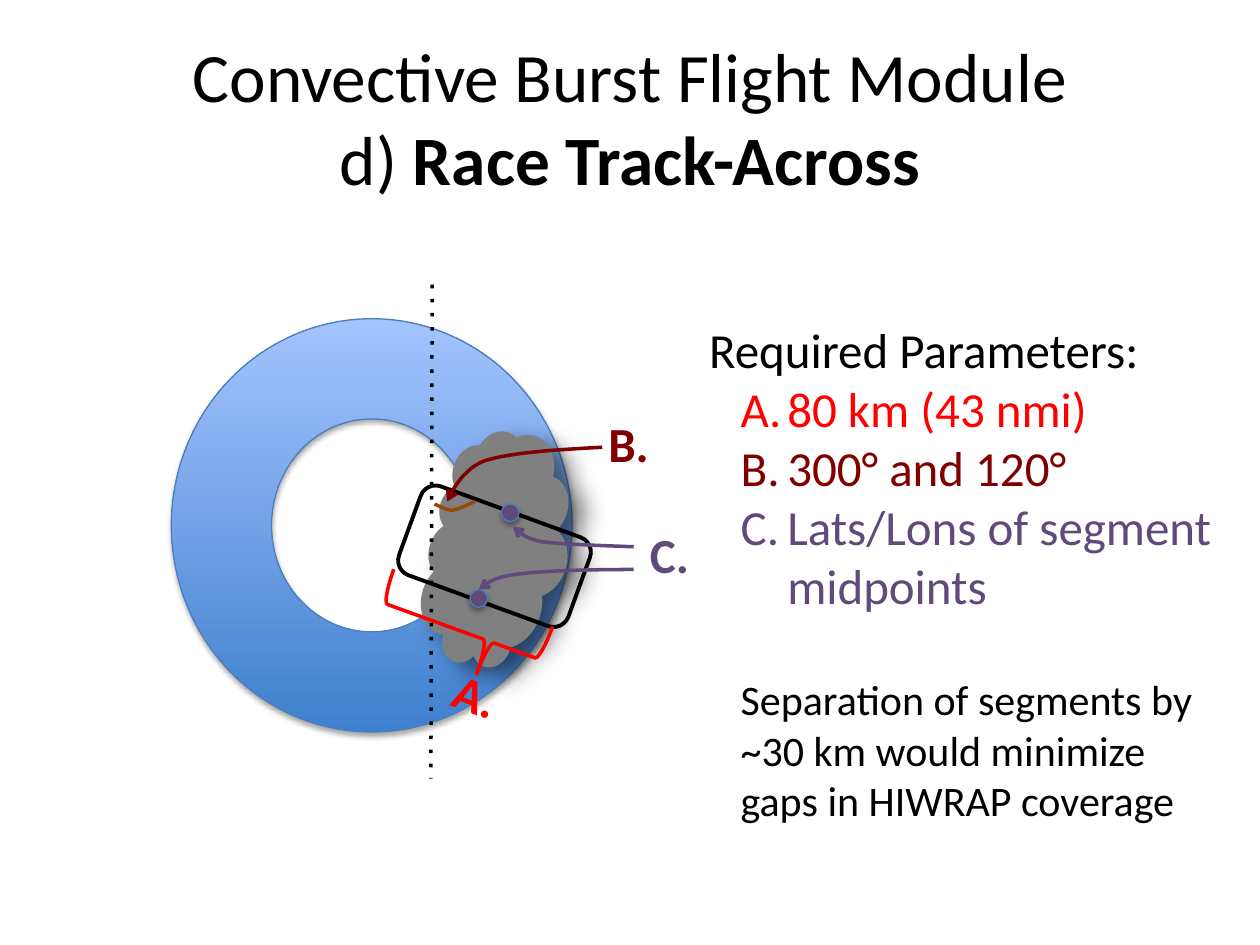
from dataclasses import dataclass
from typing import Optional

import lxml.etree
import pptx
import pptx.dml.color
import pptx.enum.dml
import pptx.enum.shapes
import pptx.enum.text
import pptx.oxml.ns
import pptx.util

Inches = pptx.util.Inches
Pt = pptx.util.Pt
Kind = pptx.enum.shapes.MSO_SHAPE
Align = pptx.enum.text.PP_ALIGN
qn = pptx.oxml.ns.qn

FONT = "Calibri"
COLORS = {
    "black": "000000", "red": "FF0000", "maroon": "800000", "purple": "604A7B",
    "brown": "984807", "gray": "808080", "outline": "4B7EBC",
    "ring_dark": "3F80CE", "ring_light": "A4C4FF",
}


@dataclass(frozen=True)
class Shadow:
    alpha: int
    blur: float
    distance: float
    angle: int


@dataclass(frozen=True)
class Figure:
    kind: Kind
    box: tuple
    fill: Optional[str] = None
    line: Optional[str] = None
    width: float = 0.75
    rotation: float = 0
    shadow: Optional[Shadow] = None


@dataclass(frozen=True)
class Curve:
    points: tuple
    color: str
    arrow: bool = False


@dataclass(frozen=True)
class Label:
    text: str
    box: tuple
    color: str
    rotation: float = 0


@dataclass(frozen=True)
class Entry:
    text: str
    color: str = "black"
    size: int = 28
    margin: float = 0
    hanging: float = 0
    gap: int = 0


SOFT = Shadow(35, 3.1, 1.8, 90)
DEEP = Shadow(52, 14.2, 11, 33)
RING = Figure(Kind.DONUT, (1.36, 2.53, 3.18, 3.28), "ring_dark", "outline", shadow=SOFT)
CLOUD = Figure(Kind.CLOUD, (3, 3.81, 1.9, 1.11), "gray", rotation=289.5, shadow=DEEP)
TRACK = Figure(Kind.ROUNDED_RECTANGLE, (3.21, 4.04, 1.43, 0.75), line="black",
               width=2.25, rotation=20)
LENGTH_BRACE = Figure(Kind.LEFT_BRACE, (3.38, 4.34, 0.56, 1.34), line="red",
                      width=2, rotation=289.9)
MIDPOINTS = [Figure(Kind.OVAL, (x, y, 0.14, 0.14), "purple", "outline", shadow=SOFT)
             for x, y in ((3.73, 4.68), (3.98, 4))]
ANGLE_ARC = Curve(((3.77, 3.98), (3.71, 4.01), (3.64, 4.04), (3.59, 4.05),
                   (3.54, 4.05), (3.45, 4), (3.45, 4)), "brown")
POINTERS = [
    Curve(((4.78, 3.55), (4.42, 3.57), (4.05, 3.59), (3.84, 3.66),
           (3.64, 3.74), (3.55, 3.98), (3.55, 3.98)), "maroon", True),
    Curve(((5.03, 4.52), (4.67, 4.52), (4.3, 4.53), (4.09, 4.56),
           (3.89, 4.58), (3.8, 4.68), (3.8, 4.68)), "purple", True),
    Curve(((5.03, 4.34), (4.75, 4.33), (4.46, 4.32), (4.3, 4.3),
           (4.14, 4.27), (4.07, 4.18), (4.07, 4.18)), "purple", True),
]
LABELS = [
    Label("A.", (3.51, 5.23, 0.55, 0.57), "red", 20.6),
    Label("B.", (4.73, 3.23, 0.53, 0.57), "maroon"),
    Label("C.", (5.06, 4.11, 0.51, 0.57), "purple"),
]
PARAMETERS = [
    Entry("Required Parameters:"),
    Entry("80 km (43 nmi)", "red", margin=0.62, hanging=0.37),
    Entry("300° and 120°", "maroon", margin=0.62, hanging=0.37),
    Entry("Lats/Lons of segment midpoints", "purple", margin=0.62, hanging=0.37),
    Entry("Separation of segments by ~30 km would minimize gaps in HIWRAP coverage",
          size=24, margin=0.25, gap=34),
]


def rgb(name: str):
    return pptx.dml.color.RGBColor.from_string(COLORS[name])


def inches(values: tuple) -> list:
    return [Inches(value) for value in values]


def set_line(line, color: str, width: float) -> None:
    line.color.rgb = rgb(color)
    line.width = Pt(width)


def set_font(font, color: str, size: float) -> None:
    font.name = FONT
    font.size = Pt(size)
    font.color.rgb = rgb(color)


def add_shadow(shape, shadow: Shadow) -> None:
    effects = shape._element.spPr.find(qn("a:effectLst"))
    outer = lxml.etree.SubElement(
        effects, qn("a:outerShdw"), blurRad=str(Pt(shadow.blur)),
        dist=str(Pt(shadow.distance)), dir=str(shadow.angle * 60000), rotWithShape="0")
    color = lxml.etree.SubElement(outer, qn("a:srgbClr"), val=COLORS["black"])
    lxml.etree.SubElement(color, qn("a:alpha"), val=str(shadow.alpha * 1000))


def draw_figure(slide, figure: Figure):
    shape = slide.shapes.add_shape(figure.kind, *inches(figure.box))
    shape.rotation = figure.rotation
    shape.shadow.inherit = False
    if figure.fill:
        shape.fill.solid()
        shape.fill.fore_color.rgb = rgb(figure.fill)
    else:
        shape.fill.background()
    if figure.line:
        set_line(shape.line, figure.line, figure.width)
    else:
        shape.line.fill.background()
    if figure.shadow:
        add_shadow(shape, figure.shadow)
    return shape


def draw_ring(slide) -> None:
    ring = draw_figure(slide, RING)
    ring.fill.gradient()
    ring.fill.gradient_angle = 90
    for stop, position, color in zip(ring.fill.gradient_stops, (0, 1),
                                     ("ring_dark", "ring_light")):
        stop.position = position
        stop.color.rgb = rgb(color)


def draw_brace(slide) -> None:
    brace = draw_figure(slide, LENGTH_BRACE)
    brace.adjustments[0] = 0.083
    brace.adjustments[1] = 0.328
    brace._element.spPr.xfrm.set("flipV", "1")


def draw_axis(slide) -> None:
    axis = slide.shapes.add_connector(pptx.enum.shapes.MSO_CONNECTOR.STRAIGHT,
                                      *inches((3.43, 2.26, 3.42, 6.18)))
    set_line(axis.line, "black", 2)
    lxml.etree.SubElement(axis.line._get_or_add_ln(), qn("a:prstDash"), val="dot")
    lxml.etree.SubElement(axis._element.spPr, qn("a:effectLst"))


def bezier(points: tuple, steps: int = 16) -> list:
    return [tuple(Inches((1 - t) ** 3 * a + 3 * (1 - t) ** 2 * t * b
                         + 3 * (1 - t) * t ** 2 * c + t ** 3 * d)
                  for a, b, c, d in zip(*points))
            for t in (step / steps for step in range(1, steps + 1))]


def draw_curve(slide, curve: Curve) -> None:
    builder = slide.shapes.build_freeform(*inches(curve.points[0]))
    for start in range(0, len(curve.points) - 1, 3):
        builder.add_line_segments(bezier(curve.points[start:start + 4]), close=False)
    shape = builder.convert_to_shape()
    shape.shadow.inherit = False
    shape.fill.background()
    set_line(shape.line, curve.color, 2)
    if curve.arrow:
        lxml.etree.SubElement(shape.line._get_or_add_ln(), qn("a:tailEnd"), type="arrow")


def draw_label(slide, label: Label) -> None:
    box = slide.shapes.add_textbox(*inches(label.box))
    box.rotation = label.rotation
    box.text_frame.word_wrap = False
    paragraph = box.text_frame.paragraphs[0]
    paragraph.text = label.text
    set_font(paragraph.font, label.color, 28)
    paragraph.font.bold = True


def draw_title(slide) -> None:
    frame = slide.shapes.add_textbox(*inches((0.5, 0.3, 9, 1.25))).text_frame
    frame.word_wrap = True
    frame.vertical_anchor = pptx.enum.text.MSO_ANCHOR.MIDDLE
    title = frame.paragraphs[0]
    title.alignment = Align.CENTER
    set_font(title.font, "black", 39.6)
    title.add_run().text = "Convective Burst Flight Module"
    title.add_line_break()
    title.add_run().text = "d) "
    pattern = title.add_run()
    pattern.text = "Race Track-Across"
    pattern.font.bold = True


def draw_parameters(slide) -> None:
    frame = slide.shapes.add_textbox(*inches((5.53, 2.49, 4.28, 4.61))).text_frame
    frame.word_wrap = True
    for index, entry in enumerate(PARAMETERS):
        paragraph = frame.add_paragraph() if index else frame.paragraphs[0]
        paragraph.text = entry.text
        paragraph.space_before = Pt(entry.gap)
        set_font(paragraph.font, entry.color, entry.size)
        properties = paragraph._p.get_or_add_pPr()
        properties.set("marL", str(Inches(entry.margin)))
        properties.set("indent", str(Inches(-entry.hanging)))
        if entry.hanging:
            numbering = properties.makeelement(qn("a:buAutoNum"), {"type": "alphaUcPeriod"})
            properties.find(qn("a:defRPr")).addprevious(numbering)


def main() -> None:
    deck = pptx.Presentation()
    deck.slide_width, deck.slide_height = Inches(10), Inches(7.5)
    slide = deck.slides.add_slide(deck.slide_layouts[6])
    draw_title(slide)
    draw_parameters(slide)
    draw_ring(slide)
    draw_figure(slide, CLOUD)
    draw_figure(slide, TRACK)
    draw_brace(slide)
    draw_axis(slide)
    draw_curve(slide, ANGLE_ARC)
    for midpoint in MIDPOINTS:
        draw_figure(slide, midpoint)
    for label in LABELS:
        draw_label(slide, label)
    for pointer in POINTERS:
        draw_curve(slide, pointer)
    deck.save("out.pptx")


if __name__ == "__main__":
    main()
